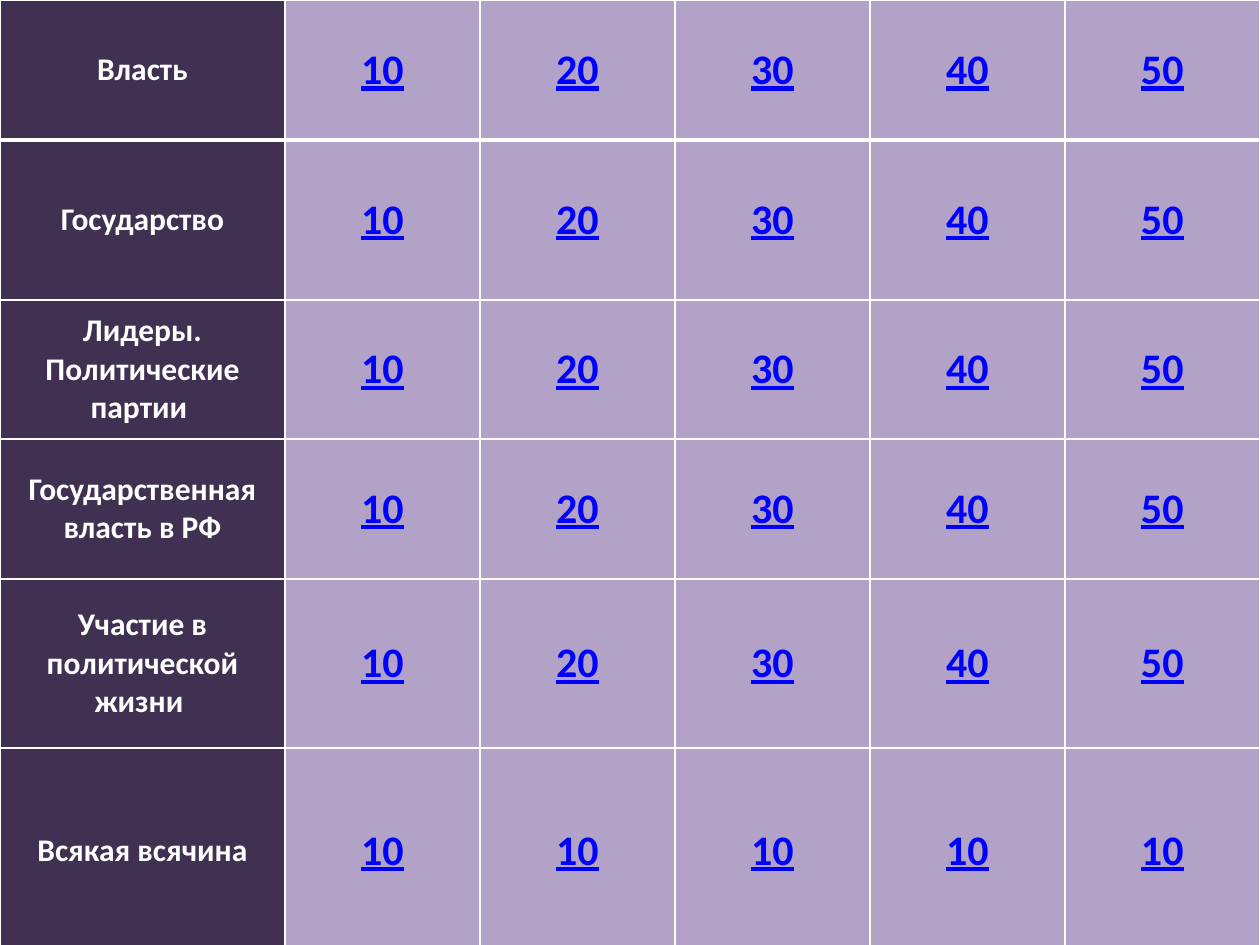
from lxml import etree
from pptx import Presentation
from pptx.dml.color import RGBColor
from pptx.enum.text import MSO_ANCHOR, PP_ALIGN
from pptx.oxml.ns import qn
from pptx.util import Emu, Pt

PX = 914400 // 126
MIDDLE = MSO_ANCHOR.MIDDLE
CENTER = PP_ALIGN.CENTER
FONT = "Calibri"
COLORS = {"topic": "403152", "score": "B3A2C7", "link": "0000FF", "white": "FFFFFF"}
WIDTHS = [285] + [195] * 5
STEPS = ["10", "20", "30", "40", "50"]
TOPICS = [
    ("Власть", 140, STEPS),
    ("Государство", 160, STEPS),
    ("Лидеры. Политические партии ", 139, STEPS),
    ("Государственная власть в РФ", 140, STEPS),
    ("Участие в политической жизни ", 169, STEPS),
    ("Всякая всячина", 206, ["10"] * 5),
]


def px(count):
    """Turn pixels into EMU."""
    return Emu(count * PX)


def rgb(name):
    """Look up a named colour."""
    return RGBColor.from_string(COLORS[name])


def edge(cell, side, width):
    """Draw one white cell border."""
    line = etree.SubElement(cell._tc.get_or_add_tcPr(), qn(f"a:{side}"), w=str(Pt(width)))
    fill = etree.SubElement(line, qn("a:solidFill"))
    etree.SubElement(fill, qn("a:srgbClr"), val=COLORS["white"])


def style(cell, text, row, topic):
    """Fill one cell as a topic or a score."""
    thick = {"lnT": 1, "lnB": 0}
    for side in ("lnL", "lnR", "lnT", "lnB"):
        edge(cell, side, 3 if thick.get(side) == row else 1)
    cell.fill.solid()
    cell.fill.fore_color.rgb = rgb("topic" if topic else "score")
    cell.vertical_anchor = MIDDLE
    cell.text_frame.text = text
    para = cell.text_frame.paragraphs[0]
    para.alignment = CENTER
    font = para.runs[0].font
    font.name = FONT
    font.bold = True
    font.size = Pt(18 if topic else 24)
    font.underline = not topic
    font.color.rgb = rgb("white" if topic else "link")


def board(slide, left, top, width, height):
    """Place the quiz board in its box."""
    frame = slide.shapes.add_table(
        len(TOPICS), len(WIDTHS), px(left), px(top), px(width), px(height))
    table = frame.table
    for col, size in zip(table.columns, WIDTHS):
        col.width = px(size)
    for row, (topic, size, scores) in enumerate(TOPICS):
        table.rows[row].height = px(size)
        for col, text in enumerate([topic, *scores]):
            style(table.cell(row, col), text, row, col == 0)


def main():
    """Build and save the slide."""
    deck = Presentation()
    deck.slide_width, deck.slide_height = px(1260), px(945)
    slide = deck.slides.add_slide(deck.slide_layouts[6])
    board(slide, 0, 0, sum(WIDTHS), sum(size for _, size, _ in TOPICS))
    deck.save("out.pptx")


if __name__ == "__main__":
    main()
